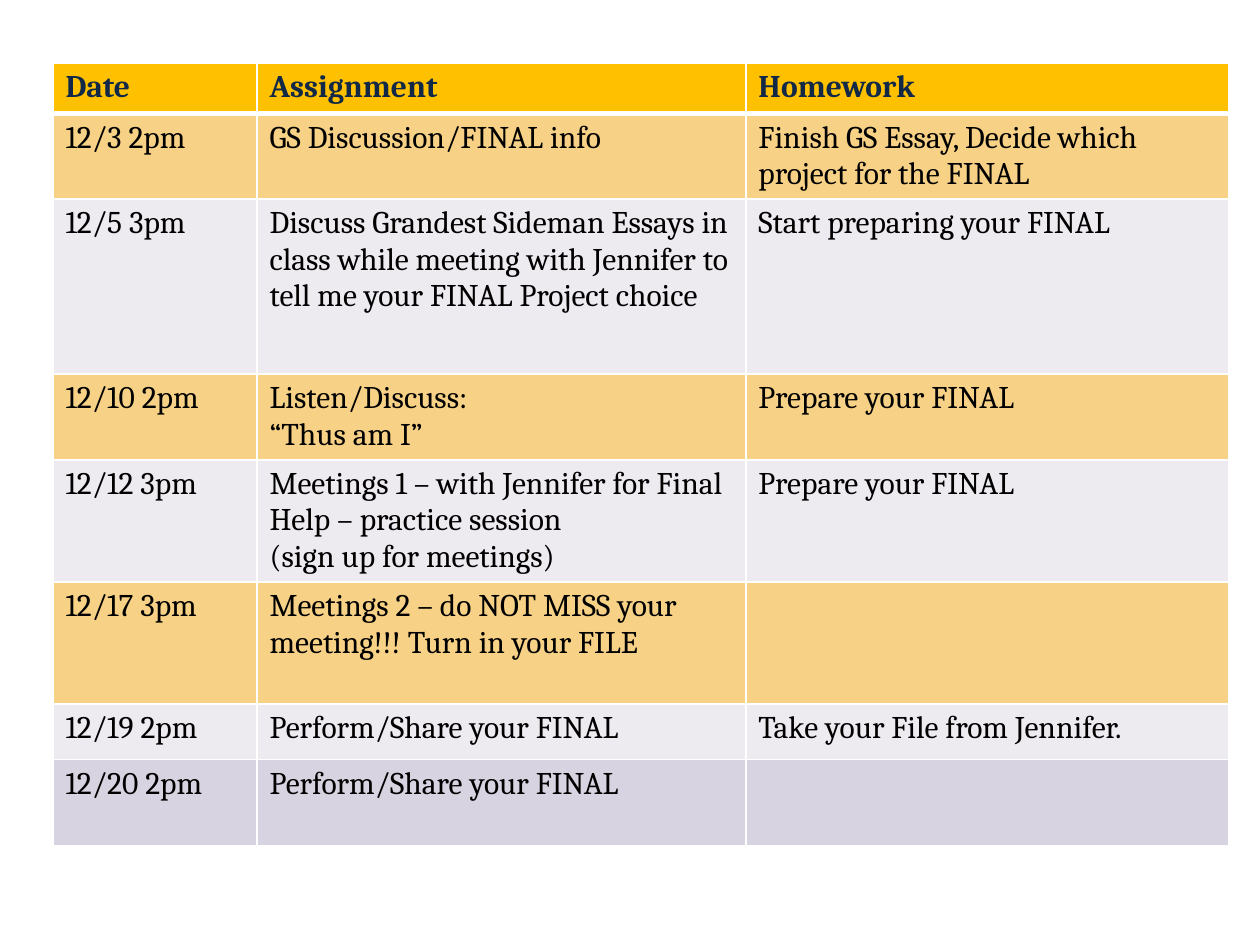
from lxml.etree import SubElement
from pptx import Presentation
from pptx.dml.color import RGBColor
from pptx.oxml.ns import qn
from pptx.util import Inches, Pt

COLORS = {
    "header": "FFC000",
    "heading": "112846",
    "gold": "F7D185",
    "pale": "EDEAF0",
    "lilac": "D8D3E0",
    "text": "000000",
    "border": "FFFFFF",
}
COLUMN_WIDTHS = [1.62, 3.88, 3.83]
SCHEDULE = [
    (0.4, "header", ["Date", "Assignment", "Homework"]),
    (0.68, "gold", ["12/3 2pm", "GS Discussion/FINAL info",
                    "Finish GS Essay, Decide which project for the FINAL"]),
    (1.39, "pale", ["12/5 3pm",
                    "Discuss Grandest Sideman Essays in class while meeting "
                    "with Jennifer to tell me your FINAL Project choice",
                    "Start preparing your FINAL"]),
    (0.68, "gold", ["12/10 2pm", "Listen/Discuss:\n“Thus am I”", "Prepare your FINAL"]),
    (0.97, "pale", ["12/12 3pm",
                    "Meetings 1 – with Jennifer for Final Help – practice session\n"
                    "(sign up for meetings)",
                    "Prepare your FINAL"]),
    (0.97, "gold", ["12/17 3pm",
                    "Meetings 2 – do NOT MISS your meeting!!! Turn in your FILE", ""]),
    (0.44, "pale", ["12/19 2pm", "Perform/Share your FINAL", "Take your File from Jennifer."]),
    (0.68, "lilac", ["12/20 2pm", "Perform/Share your FINAL", ""]),
]


class SlideBuilder:
    """Hold the text style and current slide, and add elements to it."""

    def __init__(self, page):
        self.page = page
        self.format = {"name": "Cambria", "size": Pt(18)}

    def style_text(self, cell, color, bold):
        for para in cell.text_frame.paragraphs:
            for item in (para, *para.runs):
                for name, value in {**self.format, "bold": bold}.items():
                    setattr(item.font, name, value)
                item.font.color.rgb = RGBColor.from_string(COLORS[color])

    def add_borders(self, cell, widths):
        properties = cell._tc.get_or_add_tcPr()
        for side, width in widths.items():
            line = SubElement(properties, qn(f"a:ln{side}"), w=str(Pt(width)))
            fill = SubElement(line, qn("a:solidFill"))
            SubElement(fill, qn("a:srgbClr"), val=COLORS["border"])

    def add_schedule(self, left, top, widths, rows):
        height = sum(row[0] for row in rows)
        frame = self.page.shapes.add_table(
            len(rows), len(widths), Inches(left), Inches(top),
            Inches(sum(widths)), Inches(height))
        table = frame.table
        for column, width in zip(table.columns, widths):
            column.width = Inches(width)
        for index, (row_height, fill, texts) in enumerate(rows):
            table.rows[index].height = Inches(row_height)
            is_header = index == 0
            borders = {"L": 1, "R": 1, "T": 3 if index == 1 else 1, "B": 3 if is_header else 1}
            for cell, text in zip(table.rows[index].cells, texts):
                cell.text = text
                self.style_text(cell, "heading" if is_header else "text", is_header)
                self.add_borders(cell, borders)
                cell.fill.solid()
                cell.fill.fore_color.rgb = RGBColor.from_string(COLORS[fill])


def main():
    deck = Presentation()
    deck.slide_width, deck.slide_height = Inches(10), Inches(7.5)
    builder = SlideBuilder(deck.slides.add_slide(deck.slide_layouts[6]))
    builder.add_schedule(0.42, 0.5, COLUMN_WIDTHS, SCHEDULE)
    deck.save("out.pptx")


if __name__ == "__main__":
    main()
